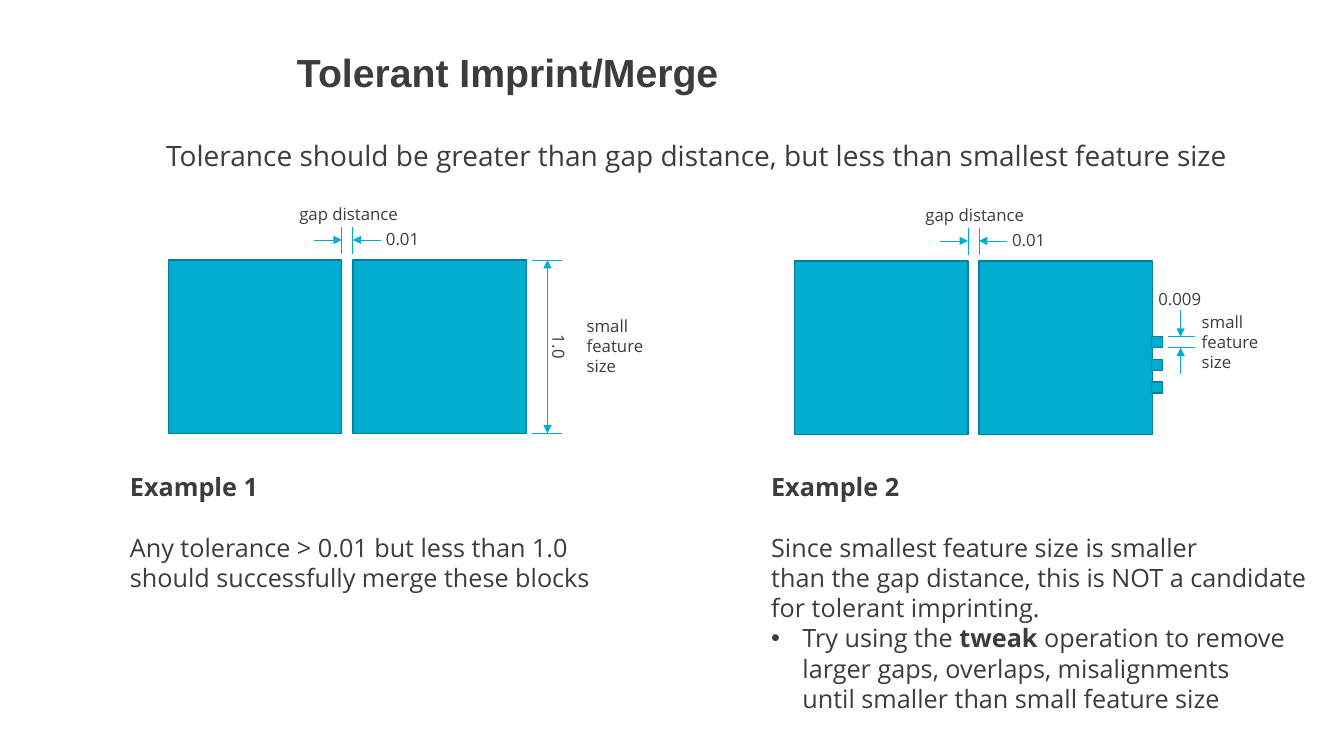
from dataclasses import dataclass

from lxml import etree
from pptx import Presentation
from pptx import util as u
from pptx.dml.color import RGBColor
from pptx.enum import shapes, text
from pptx.oxml import ns
from pptx.util import Inches


@dataclass(frozen=True)
class Theme:
    ink: RGBColor = RGBColor(0x3C, 0x3C, 0x3C)
    block: RGBColor = RGBColor(0x00, 0xAD, 0xD0)
    edge: RGBColor = RGBColor(0x00, 0x80, 0x9A)
    title_font: str = "Arial"
    body_font: str = "Open Sans"
    title_size: int = 28
    lead_size: int = 20
    body_size: int = 18
    label_size: int = 12


@dataclass(frozen=True)
class Block:
    left: float
    top: float
    side: float


@dataclass(frozen=True)
class Rule:
    """A dimension line, with optional arrowheads at its end and start."""
    x1: float
    y1: float
    x2: float
    y2: float
    end_arrow: bool = False
    start_arrow: bool = False


@dataclass(frozen=True)
class Label:
    wording: str
    left: float
    top: float
    width: float = 1.43
    height: float = 0.3
    size: int = Theme.label_size
    rotation: int = 0


@dataclass(frozen=True)
class Span:
    wording: str
    bold: bool = False


@dataclass(frozen=True)
class Para:
    spans: tuple[Span, ...]
    gap_before: float = 0
    bullet: bool = False


THEME = Theme()
SIDE = 1.72
GAP = 0.11
FEATURE = 0.11
ARROW = 0.28
FIRST = (1.67, 2.58)
SECOND = (7.88, 2.59)
FEATURE_WORDS = "small\nfeature\nsize"


def draw_block(page, block: Block) -> None:
    square = page.shapes.add_shape(
        shapes.MSO_SHAPE.RECTANGLE, Inches(block.left), Inches(block.top),
        Inches(block.side), Inches(block.side))
    square.shadow.inherit = False
    square.fill.solid()
    square.fill.fore_color.rgb = THEME.block
    square.line.color.rgb = THEME.edge
    square.line.width = u.Pt(1)


def draw_rule(page, rule: Rule) -> None:
    line = page.shapes.add_connector(
        shapes.MSO_CONNECTOR.STRAIGHT, Inches(rule.x1), Inches(rule.y1),
        Inches(rule.x2), Inches(rule.y2))
    line.line.color.rgb = THEME.block
    line.line.width = u.Pt(0.5)
    properties = line.line._get_or_add_ln()
    for wanted, tag in ((rule.start_arrow, "a:headEnd"), (rule.end_arrow, "a:tailEnd")):
        if wanted:
            etree.SubElement(properties, ns.qn(tag), type="triangle")
    etree.SubElement(line._element.spPr, ns.qn("a:effectLst"))


def set_font(para, name: str, size: int) -> None:
    para.font.name = name
    para.font.size = u.Pt(size)
    para.font.color.rgb = THEME.ink


def add_box(page, left: float, top: float, width: float, height: float):
    box = page.shapes.add_textbox(
        Inches(left), Inches(top), Inches(width), Inches(height))
    box.text_frame.word_wrap = True
    return box


def draw_label(page, label: Label) -> None:
    box = add_box(page, label.left, label.top, label.width, label.height)
    box.rotation = label.rotation
    para = box.text_frame.paragraphs[0]
    para.text = label.wording.replace("\n", "\v")
    set_font(para, THEME.body_font, label.size)


def add_bullet(para) -> None:
    properties = para._p.get_or_add_pPr()
    properties.set("marL", str(Inches(0.31)))
    properties.set("indent", str(-Inches(0.31)))
    etree.SubElement(properties, ns.qn("a:buFont"), typeface="Arial")
    etree.SubElement(properties, ns.qn("a:buChar"), char="•")


def draw_notes(page, left: float, height: float, paras: tuple[Para, ...]) -> None:
    frame = add_box(page, left, 4.63, 5.65, height).text_frame
    for index, item in enumerate(paras):
        para = frame.add_paragraph() if index else frame.paragraphs[0]
        if item.gap_before:
            para.space_before = u.Pt(item.gap_before)
        if item.bullet:
            add_bullet(para)
        set_font(para, THEME.body_font, THEME.body_size)
        for span in item.spans:
            for number, wording in enumerate(span.wording.split("\n")):
                if number:
                    para.add_line_break()
                run = para.add_run()
                run.text = wording
                run.font.bold = span.bold


def draw_pair(page, left: float, top: float) -> None:
    """Two blocks with the gap between them dimensioned above."""
    start, end = left + SIDE, left + SIDE + GAP
    for x in (left, end):
        draw_block(page, Block(x, top, SIDE))
    for x, tail in ((start, start - ARROW), (end, end + ARROW)):
        draw_rule(page, Rule(x, top - 0.06, x, top - 0.33))
        draw_rule(page, Rule(tail, top - 0.2, x, top - 0.2, end_arrow=True))
    draw_label(page, Label("gap distance", left + 1.2, top - 0.61))
    draw_label(page, Label("0.01", left + 2.06, top - 0.36))


def draw_first_example(page) -> None:
    left, top = FIRST
    draw_pair(page, left, top)
    for y in (top, top + SIDE):
        draw_rule(page, Rule(5.28, y, 5.57, y))
    draw_rule(page, Rule(5.43, top, 5.43, top + SIDE, True, True))
    draw_label(page, Label(FEATURE_WORDS, 5.72, 3.08, 0.85, 0.72))
    draw_label(page, Label("1.0", 5.31, 3.31, 0.47, rotation=90))
    draw_notes(page, 1.19, 1.25, (
        Para((Span("Example 1", True),)),
        Para((Span("Any tolerance > 0.01 but less than 1.0\n"
                   "should successfully merge these blocks"),), 21.5)))


def draw_second_example(page) -> None:
    left, top = SECOND
    draw_pair(page, left, top)
    feature_top = 3.34
    for row in range(3):
        draw_block(page, Block(11.42, feature_top + row * 0.225, FEATURE))
    for y, tail in ((feature_top, -0.26), (feature_top + FEATURE, 0.26)):
        draw_rule(page, Rule(11.58, y, 11.85, y))
        draw_rule(page, Rule(11.71, y + tail, 11.71, y, end_arrow=True))
    draw_label(page, Label(FEATURE_WORDS, 11.82, 3.04, 0.85, 0.72))
    draw_label(page, Label("0.009", 11.39, 2.82))
    draw_notes(page, 7.55, 2.67, (
        Para((Span("Example 2", True),)),
        Para((Span("Since smallest feature size is smaller\n"
                   "than the gap distance, this is NOT a candidate\n"
                   "for tolerant imprinting."),), 21.5),
        Para((Span("Try using the "), Span("tweak ", True),
              Span("operation to remove\nlarger gaps, overlaps, misalignments\n"
                   "until smaller than small feature size")), bullet=True)))


def set_title(page, wording: str) -> None:
    title = page.shapes.title
    title.left, title.top = Inches(1.32), Inches(0.28)
    title.width, title.height = Inches(7.43), Inches(0.93)
    frame = title.text_frame
    frame.margin_left = frame.margin_right = frame.margin_top = frame.margin_bottom = 0
    frame.vertical_anchor = text.MSO_ANCHOR.MIDDLE
    para = frame.paragraphs[0]
    para.text = wording
    para.alignment = text.PP_ALIGN.CENTER
    para.line_spacing = 0.9
    set_font(para, THEME.title_font, THEME.title_size)
    para.font.bold = True


def main() -> None:
    deck = Presentation()
    deck.slide_width, deck.slide_height = Inches(13.33), Inches(7.5)
    page = deck.slides.add_slide(deck.slide_layouts[5])
    set_title(page, "Tolerant Imprint/Merge")
    draw_label(page, Label(
        "Tolerance should be greater than gap distance, but less than smallest feature size",
        1.55, 1.33, 11, 0.44, THEME.lead_size))
    draw_first_example(page)
    draw_second_example(page)
    deck.save("out.pptx")


if __name__ == "__main__":
    main()
